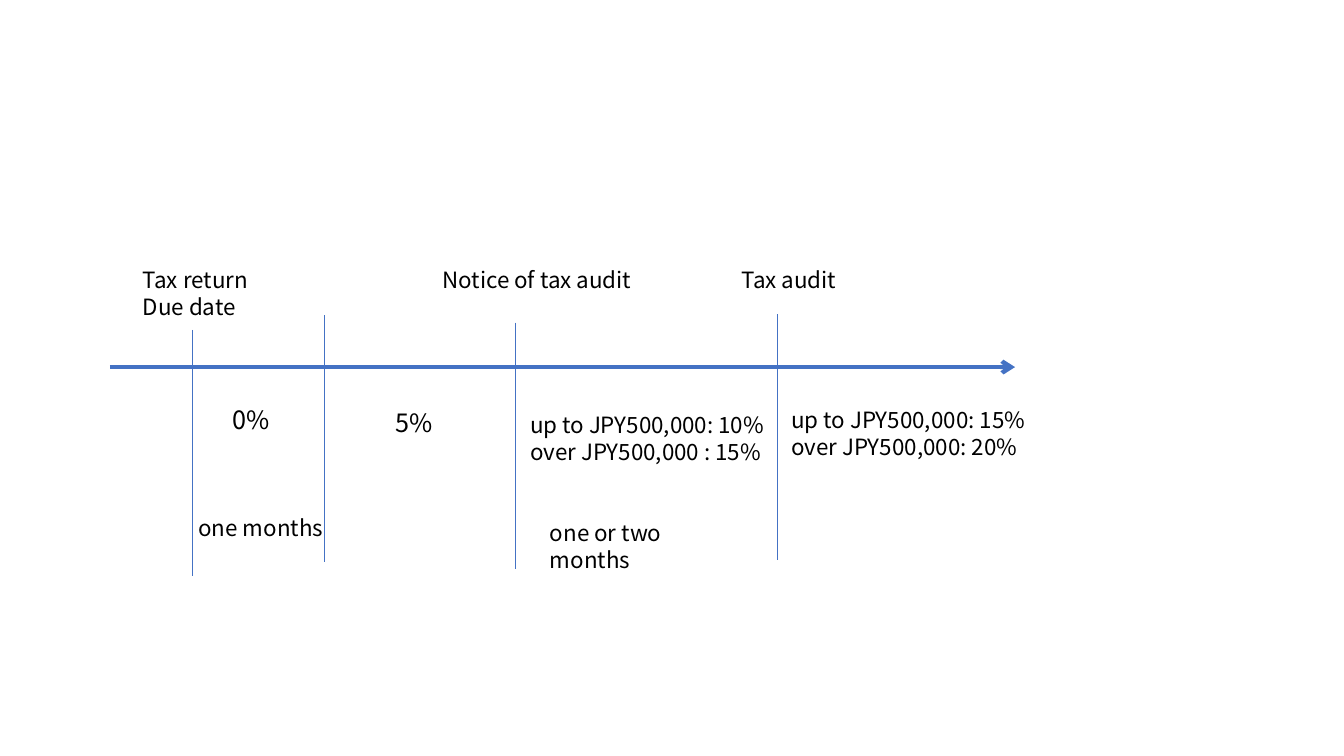
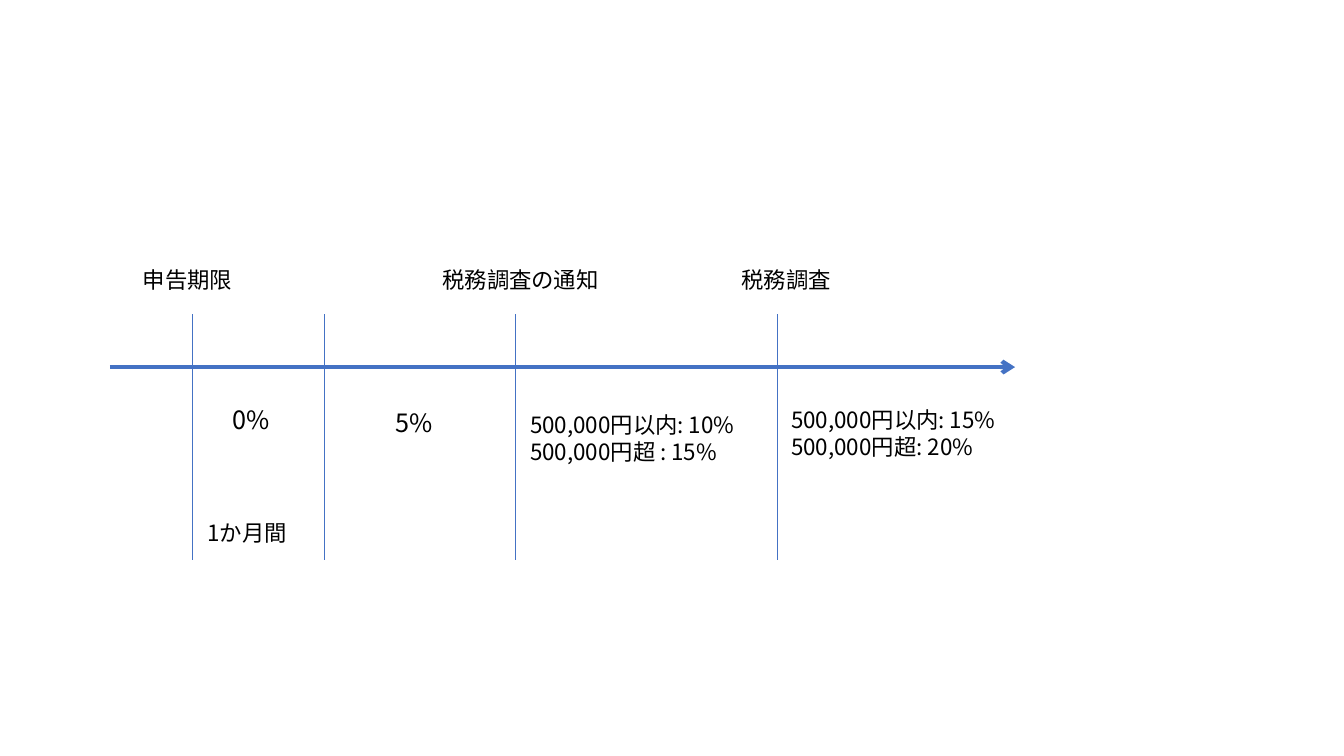
from lxml.etree import SubElement
from pptx import Presentation
from pptx.dml.color import RGBColor
from pptx.enum.shapes import MSO_CONNECTOR as LINK
from pptx.enum.text import MSO_AUTO_SIZE as FIT
from pptx.oxml.ns import qn
from pptx.util import Cm, Pt

BLUE, BLACK = "4472C4", "000000"
FACE = "Noto Sans CJK JP"
BOX = (2.77, 6.58)  # left and top of the timeline, in cm
AXIS = (22.81, 2.67)  # length and drop of the arrow
TICKS = (2.08, 5.41, 10.23, 16.81)
TALL = 6.2
LEAD = 1.2  # line height per font size

# Text places: left, top, width, font size
HEADS = ((0.58, 0, 3.89, 16), (8.13, 0, 5.44, 16), (15.67, 0, 4.47, 16))
RATES = ((2.84, 3.48, 1.63, 18), (6.96, 3.55, 1.63, 18),
         (10.34, 3.66, 6.48, 16), (16.92, 3.53, 6.71, 16))

ENGLISH = {
    "tops": (1.73, 1.37, 1.55, 1.34),
    "heads": ("Tax return\nDue date", "Notice of tax audit", "Tax audit"),
    "rates": ("0%", "5%",
              "up to JPY500,000: 10%\nover JPY500,000 : 15%",
              "up to JPY500,000: 15%\nover JPY500,000: 20%"),
    "spots": ((1.98, 6.25, 5.44, 16), (10.84, 6.37, 5.4, 16)),
    "spans": ("one months", "one or two months"),
}
JAPANESE = {
    "tops": (1.34,) * 4,
    "heads": ("申告期限", "税務調査の通知", "税務調査"),
    "rates": ("0%", "5%",
              "500,000円以内: 10%\n500,000円超 : 15%",
              "500,000円以内: 15%\n500,000円超: 20%"),
    "spots": ((2.21, 6.37, 2.87, 16),),
    "spans": ("1か月間",),
}


def paint(part, color):
    part.rgb = RGBColor.from_string(color)


def rule(slide, start, end, width, arrow=False):
    """Draw a straight line, with an arrowhead at its end if asked."""
    line = slide.shapes.add_connector(
        LINK.STRAIGHT, *(Cm(n) for n in (*start, *end)))
    paint(line.line.color, BLUE)
    line.line.width = Pt(width)
    if arrow:
        SubElement(line.line._get_or_add_ln(), qn("a:tailEnd"), type="arrow")
    SubElement(line._element.spPr, qn("a:effectLst"))


def label(slide, box, place, text):
    """Write one text box, one paragraph for each line of text."""
    x, y, width, size = place
    lines = text.split("\n")
    tall = Pt(len(lines) * size * LEAD) + Cm(0.26)
    frame = slide.shapes.add_textbox(
        Cm(box[0] + x), Cm(box[1] + y), Cm(width), tall).text_frame
    frame.word_wrap = True
    frame.auto_size = FIT.SHAPE_TO_FIT_TEXT
    frame.text = text
    for para in frame.paragraphs:
        para.line_spacing = Pt(size * LEAD)
        for run in para.runs:
            style = {"name": FACE, "size": Pt(size)}
            for key, value in style.items():
                setattr(run.font, key, value)
            paint(run.font.color, BLACK)
            SubElement(run.font._element, qn("a:ea"), typeface=FACE)


def timeline(slide, box, data):
    """Place the arrow, its ticks and all labels inside the box."""
    left, top = box
    length, drop = AXIS
    # Axis and ticks
    rule(slide, (left, top + drop), (left + length, top + drop), 3, True)
    for x, y in zip(TICKS, data["tops"]):
        rule(slide, (left + x, top + y), (left + x, top + y + TALL), 0.5)
    # Events, tax rates and time spans
    rows = ((HEADS, "heads"), (RATES, "rates"), (data["spots"], "spans"))
    for places, key in rows:
        for place, text in zip(places, data[key]):
            label(slide, box, place, text)


def main():
    deck = Presentation()
    deck.slide_width, deck.slide_height = Cm(33.87), Cm(19.05)
    blank = deck.slide_layouts[6]
    for data in (ENGLISH, JAPANESE):
        timeline(deck.slides.add_slide(blank), BOX, data)
    deck.save("out.pptx")


if __name__ == "__main__":
    main()
